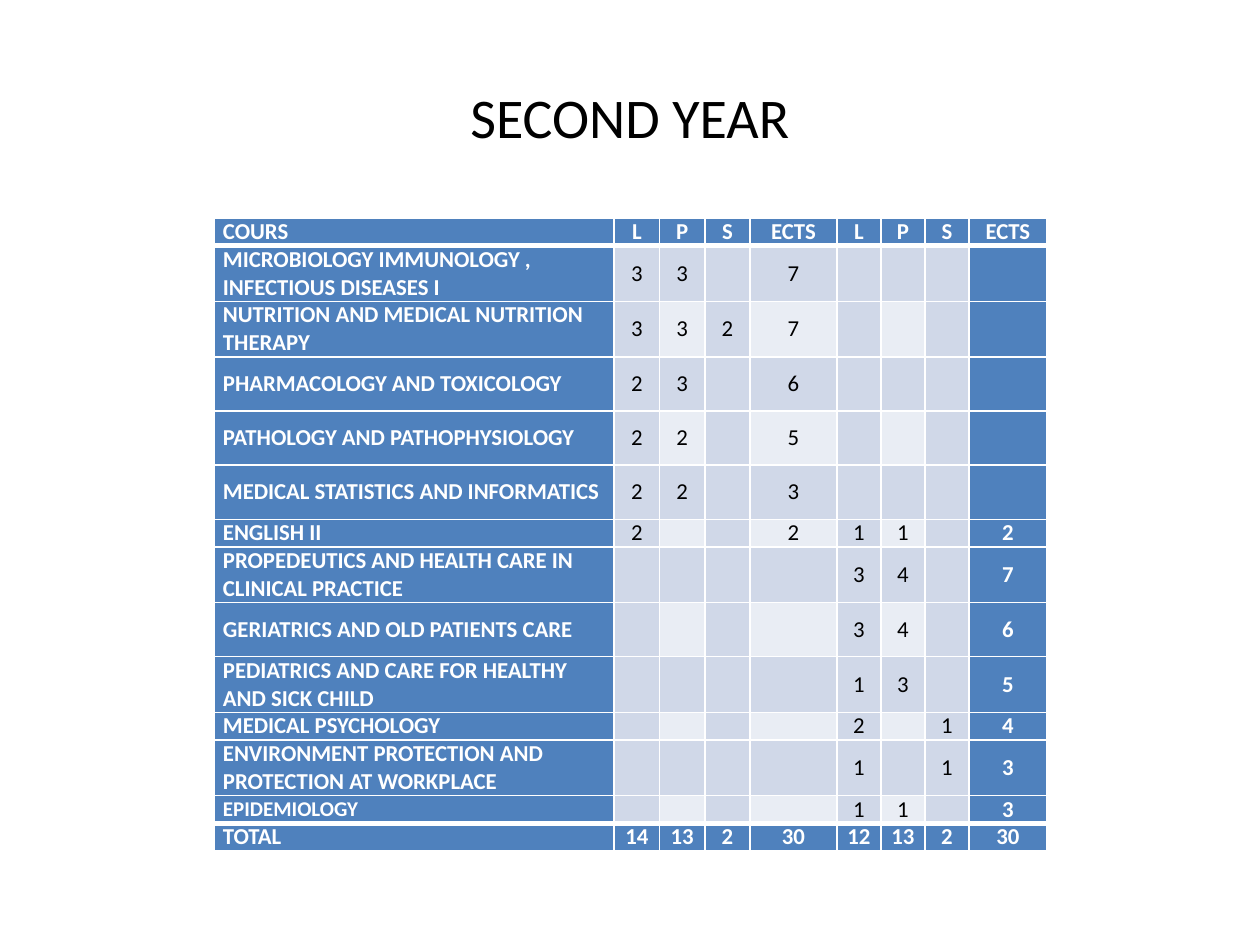
from lxml.etree import SubElement
from pptx import Presentation
from pptx.dml.color import RGBColor
from pptx.enum.text import MSO_ANCHOR, PP_ALIGN
from pptx.oxml.ns import qn
from pptx.util import Inches, Pt

BLUE, MEDIUM, LIGHT, WHITE, BLACK = "4F81BD", "D0D8E8", "E9EDF4", "FFFFFF", "000000"
SINGLE, DOUBLE = 0.22, 0.43
COLUMN_WIDTHS = [3.18, 0.36, 0.36, 0.36, 0.69, 0.35, 0.35, 0.35, 0.62]
COURSES = [
    (SINGLE, "COURS", "L", "P", "S", "ECTS", "L", "P", "S", "ECTS"),
    (DOUBLE, "MICROBIOLOGY IMMUNOLOGY , INFECTIOUS DISEASES I", "3", "3", "", "7", "", "", "", ""),
    (DOUBLE, "NUTRITION AND MEDICAL NUTRITION THERAPY", "3", "3", "2", "7", "", "", "", ""),
    (DOUBLE, "PHARMACOLOGY AND TOXICOLOGY", "2", "3", "", "6", "", "", "", ""),
    (DOUBLE, "PATHOLOGY AND PATHOPHYSIOLOGY", "2", "2", "", "5", "", "", "", ""),
    (DOUBLE, "MEDICAL STATISTICS AND INFORMATICS", "2", "2", "", "3", "", "", "", ""),
    (SINGLE, "ENGLISH II", "2", "", "", "2", "1", "1", "", "2"),
    (DOUBLE, "PROPEDEUTICS AND HEALTH CARE IN CLINICAL PRACTICE", "", "", "", "", "3", "4", "", "7"),
    (DOUBLE, "GERIATRICS AND OLD PATIENTS CARE", "", "", "", "", "3", "4", "", "6"),
    (DOUBLE, "PEDIATRICS AND CARE FOR HEALTHY AND SICK CHILD", "", "", "", "", "1", "3", "", "5"),
    (SINGLE, "MEDICAL PSYCHOLOGY", "", "", "", "", "2", "", "1", "4"),
    (DOUBLE, "ENVIRONMENT PROTECTION AND PROTECTION AT WORKPLACE", "", "", "", "", "1", "", "1", "3"),
    (SINGLE, "EPIDEMIOLOGY", "", "", "", "", "1", "1", "", "3"),
    (SINGLE, "TOTAL", "14", "13", "2", "30", "12", "13", "2", "30"),
]


def color(value):
    """Turn a hex string into a colour."""
    return RGBColor.from_string(value)


def write_text(frame, text, size=13, fill=BLACK, bold=False, align=PP_ALIGN.CENTER):
    """Write one formatted paragraph, keeping the size even when it is empty."""
    paragraph = frame.paragraphs[0]
    paragraph.alignment = align
    if not text:
        paragraph._p.get_or_add_endParaRPr().set("sz", str(size * 100))
        return
    run = paragraph.add_run()
    run.text = text
    run.font.name = "Calibri"
    run.font.size = Pt(size)
    run.font.bold = bold
    run.font.color.rgb = color(fill)


def set_borders(cell, top=1, bottom=1):
    """Draw white lines, with widths in points, on the four sides of a cell."""
    properties = cell._tc.get_or_add_tcPr()
    for side, width in (("L", 1), ("R", 1), ("T", top), ("B", bottom)):
        line = SubElement(properties, qn(f"a:ln{side}"), w=str(Pt(width)))
        solid = SubElement(line, qn("a:solidFill"))
        SubElement(solid, qn("a:srgbClr"), val=WHITE)


def format_cell(cell, text, row, column):
    """Style a cell according to its place in the course table."""
    last_row, last_column = len(COURSES) - 1, len(COLUMN_WIDTHS) - 1
    strong = row in (0, last_row) or column in (0, last_column)
    banded = row % 2 == 0 and column % 2 == 0
    set_borders(cell, top=3 if row in (1, last_row) else 1,
                bottom=3 if row in (0, last_row - 1) else 1)
    cell.fill.solid()
    cell.fill.fore_color.rgb = color(BLUE if strong else LIGHT if banded else MEDIUM)
    cell.margin_left = cell.margin_right = Inches(0.07)
    cell.margin_top = cell.margin_bottom = 0
    cell.vertical_anchor = MSO_ANCHOR.MIDDLE
    write_text(cell.text_frame, text, size=12 if text == "EPIDEMIOLOGY" else 13,
               fill=WHITE if strong else BLACK, bold=strong,
               align=PP_ALIGN.LEFT if column == 0 else PP_ALIGN.CENTER)


def add_title(slide, left, top, width, height):
    """Place the slide title in the given box."""
    title = slide.shapes.title
    title.left, title.top, title.width, title.height = map(Inches, (left, top, width, height))
    title.text_frame.vertical_anchor = MSO_ANCHOR.MIDDLE
    write_text(title.text_frame, "SECOND YEAR", size=32)


def add_course_table(slide, left, top, width, height):
    """Build the table of courses, hours and credits in the given box."""
    table = slide.shapes.add_table(len(COURSES), len(COLUMN_WIDTHS),
                                   *map(Inches, (left, top, width, height))).table
    scale = width / sum(COLUMN_WIDTHS)
    for column, column_width in zip(table.columns, COLUMN_WIDTHS):
        column.width = Inches(column_width * scale)
    for row, (row_height, *texts) in enumerate(COURSES):
        table.rows[row].height = Inches(row_height)
        for column, text in enumerate(texts):
            format_cell(table.cell(row, column), text, row, column)


def main():
    """Build and save the slide."""
    presentation = Presentation()
    presentation.slide_width, presentation.slide_height = Inches(10), Inches(7.5)
    slide = presentation.slides.add_slide(presentation.slide_layouts[5])
    add_title(slide, 0.5, 0.3, 9, 1.25)
    add_course_table(slide, 1.7, 1.73, 6.61, 4.97)
    presentation.save("out.pptx")


if __name__ == "__main__":
    main()
